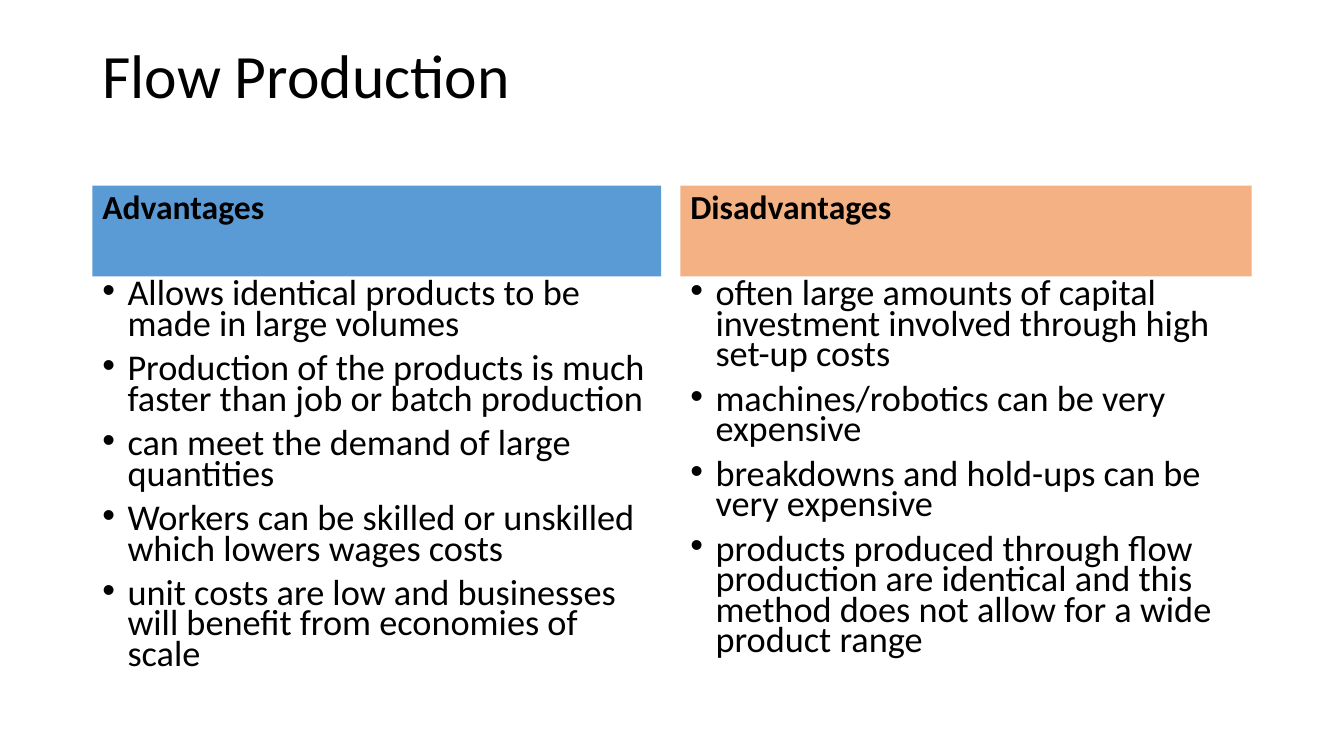
from pptx import Presentation
from pptx.dml.color import RGBColor
from pptx.enum.shapes import MSO_SHAPE as Shape
from pptx.enum.text import MSO_ANCHOR as Anchor, PP_ALIGN as Align
from pptx.oxml.ns import qn
from pptx.util import Inches, Pt
from lxml.etree import SubElement

BLACK = RGBColor(0x00, 0x00, 0x00)
BLUE = RGBColor(0x5B, 0x9B, 0xD5)
ORANGE = RGBColor(0xF4, 0xB1, 0x83)

MARGIN = 11
HEADING_TOP, HEADING_ROWS = 22.1, 10.8

# heading, colour, left column, width in columns, list height in rows, points
COMPARISON = [
    ("Advantages", BLUE, MARGIN, 67.7, 53.3, [
        "Allows identical products to be made in large volumes",
        "Production of the products is much faster than job or batch production",
        "can meet the demand of large quantities",
        "Workers can be skilled or unskilled which lowers wages costs",
        "unit costs are low and businesses will benefit from economies of scale",
    ]),
    ("Disadvantages", ORANGE, 81, 68, 48.4, [
        "often large amounts of capital investment involved through high set-up costs",
        "machines/robotics can be very expensive",
        "breakdowns and hold-ups can be very expensive",
        "products produced through flow production are identical and this method "
        "does not allow for a wide product range",
    ]),
]


class ComparisonSlide:
    """Places elements on a grid of 160 columns by 90 rows."""

    FONT = "Calibri"
    COLUMNS, ROWS = 160, 90

    def __init__(self, deck):
        self.slide = deck.slides.add_slide(deck.slide_layouts[6])
        self.column = deck.slide_width / self.COLUMNS
        self.row = deck.slide_height / self.ROWS

    def area(self, left, top, width, height):
        return (int(left * self.column), int(top * self.row),
                int(width * self.column), int(height * self.row))

    def set_text(self, frame, text, size, line_spacing, before=0, bold=False):
        frame.word_wrap = True
        frame.vertical_anchor = Anchor.TOP
        frame.text = text
        for paragraph in frame.paragraphs:
            paragraph.alignment = Align.LEFT
            paragraph.line_spacing = line_spacing
            paragraph.space_before = Pt(before)
            for run in paragraph.runs:
                run.font.name = self.FONT
                run.font.size = Pt(size)
                run.font.bold = bold
                run.font.color.rgb = BLACK

    def title(self, text, *place):
        box = self.slide.shapes.add_textbox(*self.area(*place))
        self.set_text(box.text_frame, text, 44, 0.9)

    def heading(self, text, color, *place):
        band = self.slide.shapes.add_shape(Shape.RECTANGLE, *self.area(*place))
        band.shadow.inherit = False
        band.fill.solid()
        band.fill.fore_color.rgb = color
        band.line.fill.background()
        self.set_text(band.text_frame, text, 24, 0.9, before=10, bold=True)

    def bullets(self, points, *place):
        box = self.slide.shapes.add_textbox(*self.area(*place))
        self.set_text(box.text_frame, "\n".join(points), 25.9, 0.7, before=10)
        indent = Inches(0.25)
        for paragraph in box.text_frame.paragraphs:
            properties = paragraph._p.get_or_add_pPr()
            properties.set("marL", str(indent))
            properties.set("indent", str(-indent))
            SubElement(properties, qn("a:buFont")).set("typeface", "Arial")
            SubElement(properties, qn("a:buChar")).set("char", "•")


def main():
    deck = Presentation()
    deck.slide_width, deck.slide_height = Inches(13.33), Inches(7.5)
    page = ComparisonSlide(deck)
    page.title("Flow Production", MARGIN, 4.8, 138, 17.4)
    for heading, color, left, width, list_rows, points in COMPARISON:
        page.heading(heading, color, left, HEADING_TOP, width, HEADING_ROWS)
        page.bullets(points, left, HEADING_TOP + HEADING_ROWS, width, list_rows)
    deck.save("out.pptx")


if __name__ == "__main__":
    main()
